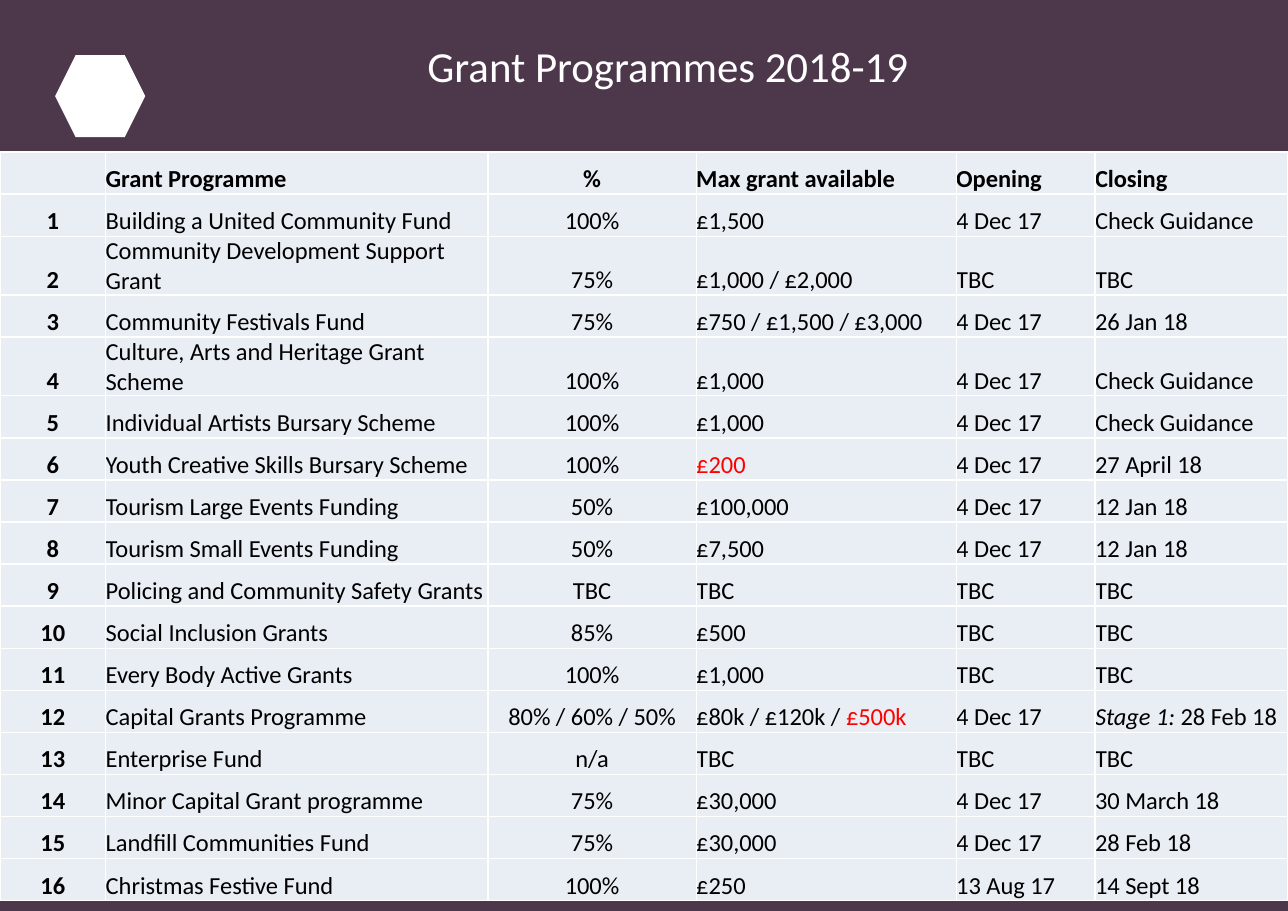
from typing import NamedTuple

from lxml.etree import SubElement
from pptx import Presentation
from pptx.dml.color import RGBColor
from pptx.enum.shapes import MSO_SHAPE
from pptx.enum.text import MSO_ANCHOR, MSO_AUTO_SIZE, PP_ALIGN
from pptx.oxml.ns import qn
from pptx.slide import Slide
from pptx.table import Table, _Cell
from pptx.util import Inches, Pt

PLUM = RGBColor(0x4C, 0x37, 0x4B)
WHITE = RGBColor(0xFF, 0xFF, 0xFF)
BLACK = RGBColor(0x00, 0x00, 0x00)
RED = RGBColor(0xFF, 0x00, 0x00)
PALE_BLUE = RGBColor(0xE9, 0xED, 0xF4)

SLIDE_WIDTH, SLIDE_HEIGHT = Inches(11.69), Inches(8.27)
# The slide is a grid of 100 columns by 100 rows.
COLUMN, ROW = SLIDE_WIDTH / 100, SLIDE_HEIGHT / 100

NO_MARGINS = {f"margin_{side}": 0 for side in ("left", "top", "right", "bottom")}


class Box(NamedTuple):
    """A rectangle in grid columns and rows."""
    left: float
    top: float
    width: float
    height: float

    def lengths(self) -> dict[str, int]:
        return {
            "left": round(self.left * COLUMN),
            "top": round(self.top * ROW),
            "width": round(self.width * COLUMN),
            "height": round(self.height * ROW),
        }


class Block(NamedTuple):
    preset: MSO_SHAPE
    box: Box
    color: RGBColor


class Run(NamedTuple):
    text: str
    color: RGBColor = BLACK
    italic: bool = False


class Grant(NamedTuple):
    """One row of the table; a cell is plain text or a list of runs."""
    programme: str
    percent: str
    maximum: str | list[Run]
    opening: str
    closing: str | list[Run]


BLOCKS = [
    Block(MSO_SHAPE.RECTANGLE, Box(0, 0, 100, 19.95), PLUM),
    Block(MSO_SHAPE.HEXAGON, Box(4.28, 6.05, 7, 9), WHITE),
    Block(MSO_SHAPE.RECTANGLE, Box(0, 92.74, 100, 7.26), PLUM),
]
TITLE_BOX = Box(33.19, 4.35, 60.65, 5.68)

TABLE_TOP, TABLE_ROW = 16.69, 4.62
TABLE_COLUMNS = [8.21, 29.68, 16.17, 20.19, 10.78, 14.97]
CENTRED_COLUMNS = (0, 2)

HEADER = Grant("Grant Programme", "%", "Max grant available", "Opening", "Closing")
GRANTS = [
    Grant("Building a United Community Fund", "100%", "£1,500", "4 Dec 17", "Check Guidance"),
    Grant("Community Development Support Grant", "75%", "£1,000 / £2,000", "TBC", "TBC"),
    Grant("Community Festivals Fund", "75%", "£750 / £1,500 / £3,000", "4 Dec 17", "26 Jan 18"),
    Grant("Culture, Arts and Heritage Grant Scheme", "100%", "£1,000", "4 Dec 17",
          "Check Guidance"),
    Grant("Individual Artists Bursary Scheme", "100%", "£1,000", "4 Dec 17", "Check Guidance"),
    Grant("Youth Creative Skills Bursary Scheme", "100%", [Run("£200", RED)], "4 Dec 17",
          "27 April 18"),
    Grant("Tourism Large Events Funding", "50%", "£100,000", "4 Dec 17", "12 Jan 18"),
    Grant("Tourism Small Events Funding", "50%", "£7,500", "4 Dec 17", "12 Jan 18"),
    Grant("Policing and Community Safety Grants", "TBC", "TBC", "TBC", "TBC"),
    Grant("Social Inclusion Grants", "85%", "£500", "TBC", "TBC"),
    Grant("Every Body Active Grants", "100%", "£1,000", "TBC", "TBC"),
    Grant("Capital Grants Programme", "80% / 60% / 50%",
          [Run("£80k / £120k / "), Run("£500k", RED)], "4 Dec 17",
          [Run("Stage 1:", italic=True), Run(" 28 Feb 18")]),
    Grant("Enterprise Fund", "n/a", "TBC", "TBC", "TBC"),
    Grant("Minor Capital Grant programme", "75%", "£30,000", "4 Dec 17", "30 March 18"),
    Grant("Landfill Communities Fund", "75%", "£30,000", "4 Dec 17", "28 Feb 18"),
    Grant("Christmas Festive Fund", "100%", "£250", "13 Aug 17", "14 Sept 18"),
]


def set_format(target: object, values: dict[str, object]) -> None:
    for name, value in values.items():
        setattr(target, name, value)


def add_block(slide: Slide, block: Block) -> None:
    shape = slide.shapes.add_shape(block.preset, **block.box.lengths())
    shape.shadow.inherit = False
    shape.fill.solid()
    shape.fill.fore_color.rgb = block.color
    shape.line.fill.background()


def place_title(slide: Slide, text: str) -> None:
    title = slide.shapes.title
    slide.shapes._spTree.append(title._element)  # in front of the plum band
    set_format(title, TITLE_BOX.lengths())
    set_format(title.text_frame, NO_MARGINS | {
        "text": text,
        "word_wrap": True,
        "vertical_anchor": MSO_ANCHOR.TOP,
        "auto_size": MSO_AUTO_SIZE.SHAPE_TO_FIT_TEXT,
    })
    paragraph = title.text_frame.paragraphs[0]
    paragraph.alignment = PP_ALIGN.LEFT
    font = paragraph.runs[0].font
    set_format(font, {"name": "Calibri", "size": Pt(28), "bold": False})
    font.color.rgb = WHITE


def add_borders(cell: _Cell) -> None:
    """Draw a thin white line on all four sides; call before the cell's fill."""
    properties = cell._tc.get_or_add_tcPr()
    for side in ("a:lnL", "a:lnR", "a:lnT", "a:lnB"):
        line = SubElement(properties, qn(side), w=str(Pt(1)))
        fill = SubElement(line, qn("a:solidFill"))
        SubElement(fill, qn("a:srgbClr"), val=str(WHITE))


def fill_cell(cell: _Cell, content: str | list[Run], bold: bool, centred: bool) -> None:
    add_borders(cell)
    set_format(cell, NO_MARGINS | {"vertical_anchor": MSO_ANCHOR.BOTTOM})
    cell.fill.solid()
    cell.fill.fore_color.rgb = PALE_BLUE
    paragraph = cell.text_frame.paragraphs[0]
    paragraph.alignment = PP_ALIGN.CENTER if centred else PP_ALIGN.LEFT
    if not content:
        return
    for part in [Run(content)] if isinstance(content, str) else content:
        run = paragraph.add_run()
        run.text = part.text
        set_format(run.font, {"name": "Calibri", "size": Pt(16),
                              "bold": bold, "italic": part.italic})
        run.font.color.rgb = part.color


def add_grant_table(slide: Slide) -> Table:
    rows = [("", *HEADER)] + [(str(number), *grant) for number, grant in enumerate(GRANTS, 1)]
    box = Box(0, TABLE_TOP, sum(TABLE_COLUMNS), TABLE_ROW * len(rows))
    table = slide.shapes.add_table(len(rows), len(TABLE_COLUMNS), **box.lengths()).table
    set_format(table, {"first_row": False, "horz_banding": False})
    for column, width in zip(table.columns, TABLE_COLUMNS):
        column.width = round(width * COLUMN)
    for row_index, row in enumerate(rows):
        table.rows[row_index].height = round(TABLE_ROW * ROW)
        for column_index, content in enumerate(row):
            fill_cell(table.cell(row_index, column_index), content,
                      bold=row_index == 0 or column_index == 0,
                      centred=column_index in CENTRED_COLUMNS)
    return table


def main() -> None:
    presentation = Presentation()
    set_format(presentation, {"slide_width": SLIDE_WIDTH, "slide_height": SLIDE_HEIGHT})
    slide = presentation.slides.add_slide(presentation.slide_layouts.get_by_name("Title Only"))
    for block in BLOCKS:
        add_block(slide, block)
    place_title(slide, "Grant Programmes 2018-19")
    add_grant_table(slide)
    presentation.save("out.pptx")


if __name__ == "__main__":
    main()
